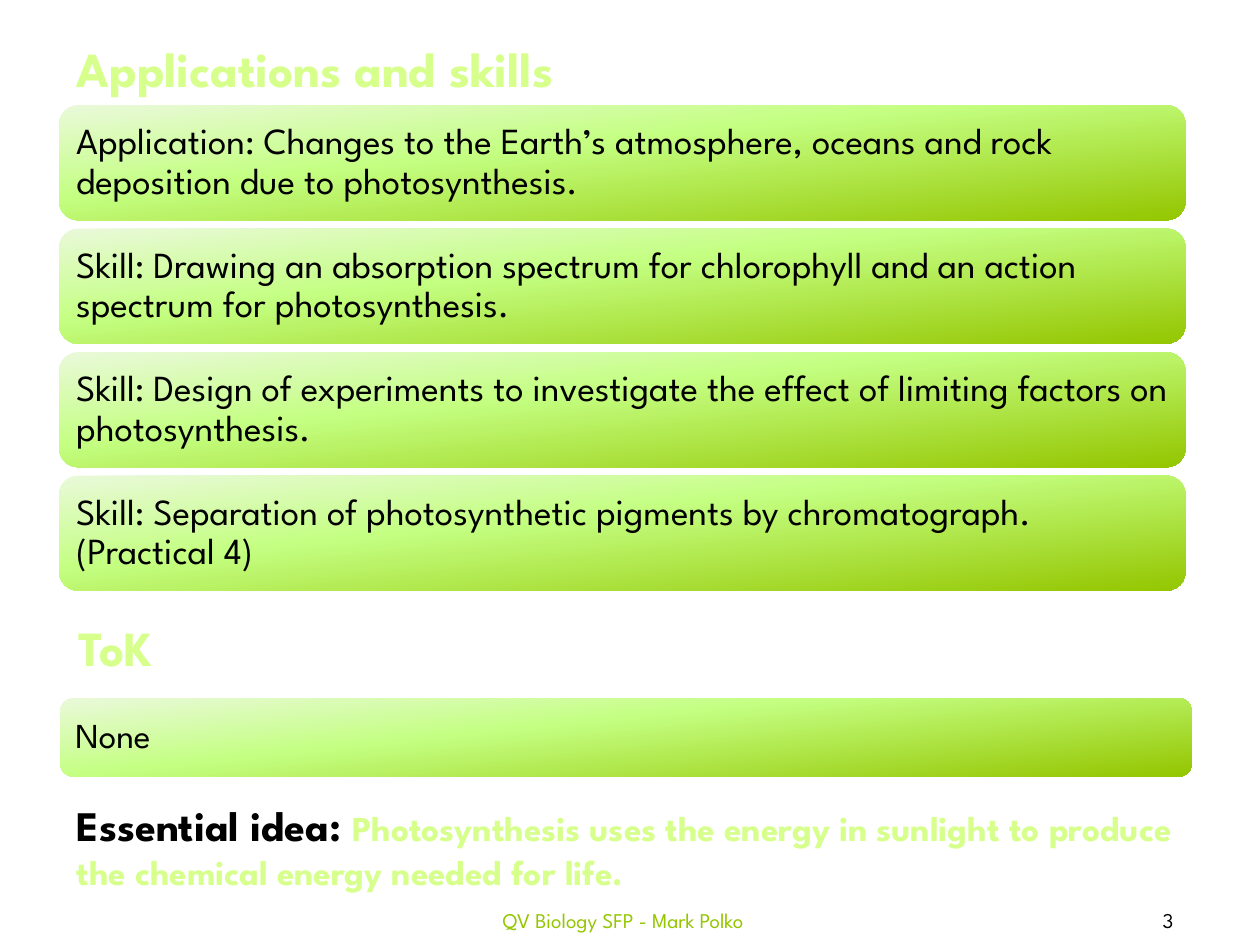
from dataclasses import dataclass

from lxml.etree import SubElement
from pptx import Presentation
from pptx.dml.color import RGBColor
from pptx.enum.shapes import MSO_SHAPE as Preset
from pptx.enum.text import MSO_ANCHOR as Anchor, MSO_AUTO_SIZE as AutoSize, PP_ALIGN as Align
from pptx.oxml import parse_xml
from pptx.oxml.ns import nsdecls, qn
from pptx.util import Pt

FONT = "League Spartan"
COLORS = {
    "ink": "000000",
    "lime": "D6FF8C",
    "green": "94C600",
    "outline": "434128",
    "pale": "EAF9DA",
    "bright": "C4FF82",
}
GRADIENT = [(0, "pale"), (40, "bright"), (100, "green")]
GRADIENT_ANGLE = 84


@dataclass(frozen=True)
class Box:
    left: float
    top: float
    width: float
    height: float

    def lengths(self):
        return [Pt(v) for v in (self.left, self.top, self.width, self.height)]


@dataclass(frozen=True)
class Words:
    text: str
    size: float
    color: str = "ink"
    bold: bool = False


@dataclass(frozen=True)
class Panel:
    box: Box
    words: Words
    inset: float


def add_words(paragraph, words: Words) -> None:
    """Add one run; bold display text also gets a thin dark outline."""
    run = paragraph.add_run()
    run.text = words.text
    run.font.name = FONT
    run.font.size = Pt(words.size)
    run.font.bold = words.bold
    run.font.color.rgb = RGBColor.from_string(COLORS[words.color])
    if words.bold:
        line = parse_xml(
            f'<a:ln {nsdecls("a")} w="{Pt(1)}"><a:solidFill>'
            f'<a:srgbClr val="{COLORS["outline"]}"/></a:solidFill></a:ln>'
        )
        run.font._element.insert(0, line)


def fill_gradient(shape) -> None:
    """Replace the two default stops, as the public API cannot add a third."""
    shape.fill.gradient()
    shape.fill.gradient_angle = 360 - GRADIENT_ANGLE
    stops = shape._element.spPr.find(qn("a:gradFill")).find(qn("a:gsLst"))
    for stop in list(stops):
        stops.remove(stop)
    for percent, color in GRADIENT:
        stop = SubElement(stops, qn("a:gs"), pos=str(percent * 1000))
        SubElement(stop, qn("a:srgbClr"), val=COLORS[color])


def add_panel(slide, panel: Panel) -> None:
    shape = slide.shapes.add_shape(Preset.ROUNDED_RECTANGLE, *panel.box.lengths())
    shape.shadow.inherit = False
    shape.line.fill.background()
    fill_gradient(shape)
    frame = shape.text_frame
    frame.word_wrap = True
    frame.vertical_anchor = Anchor.MIDDLE
    frame.margin_left = frame.margin_right = Pt(panel.inset)
    paragraph = frame.paragraphs[0]
    paragraph.alignment = Align.LEFT
    paragraph.line_spacing = 0.9
    add_words(paragraph, panel.words)


def add_text(slide, box: Box, *runs: Words, footer: bool = False) -> None:
    frame = slide.shapes.add_textbox(*box.lengths()).text_frame
    frame.word_wrap = True
    paragraph = frame.paragraphs[0]
    if footer:
        frame.vertical_anchor = Anchor.MIDDLE
        paragraph.alignment = Align.CENTER
    else:
        frame.auto_size = AutoSize.SHAPE_TO_FIT_TEXT
    for words in runs:
        add_words(paragraph, words)


SKILLS = [
    "Application: Changes to the Earth’s atmosphere, oceans and rock deposition due to photosynthesis.",
    "Skill: Drawing an absorption spectrum for chlorophyll and an action spectrum for photosynthesis.",
    "Skill: Design of experiments to investigate the effect of limiting factors on photosynthesis.",
    "Skill: Separation of photosynthetic pigments by chromatograph. (Practical 4)",
]
SKILL_TOP, SKILL_PITCH = 60.1, 70.56


def main() -> None:
    deck = Presentation()
    deck.slide_width, deck.slide_height = Pt(720), Pt(540)
    slide = deck.slides.add_slide(deck.slide_layouts[6])

    add_text(slide, Box(614.9, 511.2, 105.1, 28.8), Words("3", 12), footer=True)
    add_text(slide, Box(218.2, 511.2, 275.8, 28.8),
             Words("QV Biology SFP - Mark Polko", 12, "green"), footer=True)

    for row, skill in enumerate(SKILLS):
        box = Box(33.8, SKILL_TOP + row * SKILL_PITCH, 643.7, 65.8)
        add_panel(slide, Panel(box, Words(skill, 21), inset=6.6))
    add_panel(slide, Panel(Box(34.4, 398.9, 646.6, 44.9), Words("None", 20), inset=6.4))

    add_text(slide, Box(36.7, 18.7, 345.6, 41),
             Words("Applications and skills", 28, "lime", bold=True))
    add_text(slide, Box(37.8, 349.2, 345.6, 41), Words("ToK", 28, "lime", bold=True))
    add_text(slide, Box(36.7, 453.6, 650.2, 60.5),
             Words("Essential idea: ", 24, bold=True),
             Words("Photosynthesis uses the energy in sunlight to produce "
                   "the chemical energy needed for life.", 20, "lime", bold=True))

    deck.save("out.pptx")


if __name__ == "__main__":
    main()
